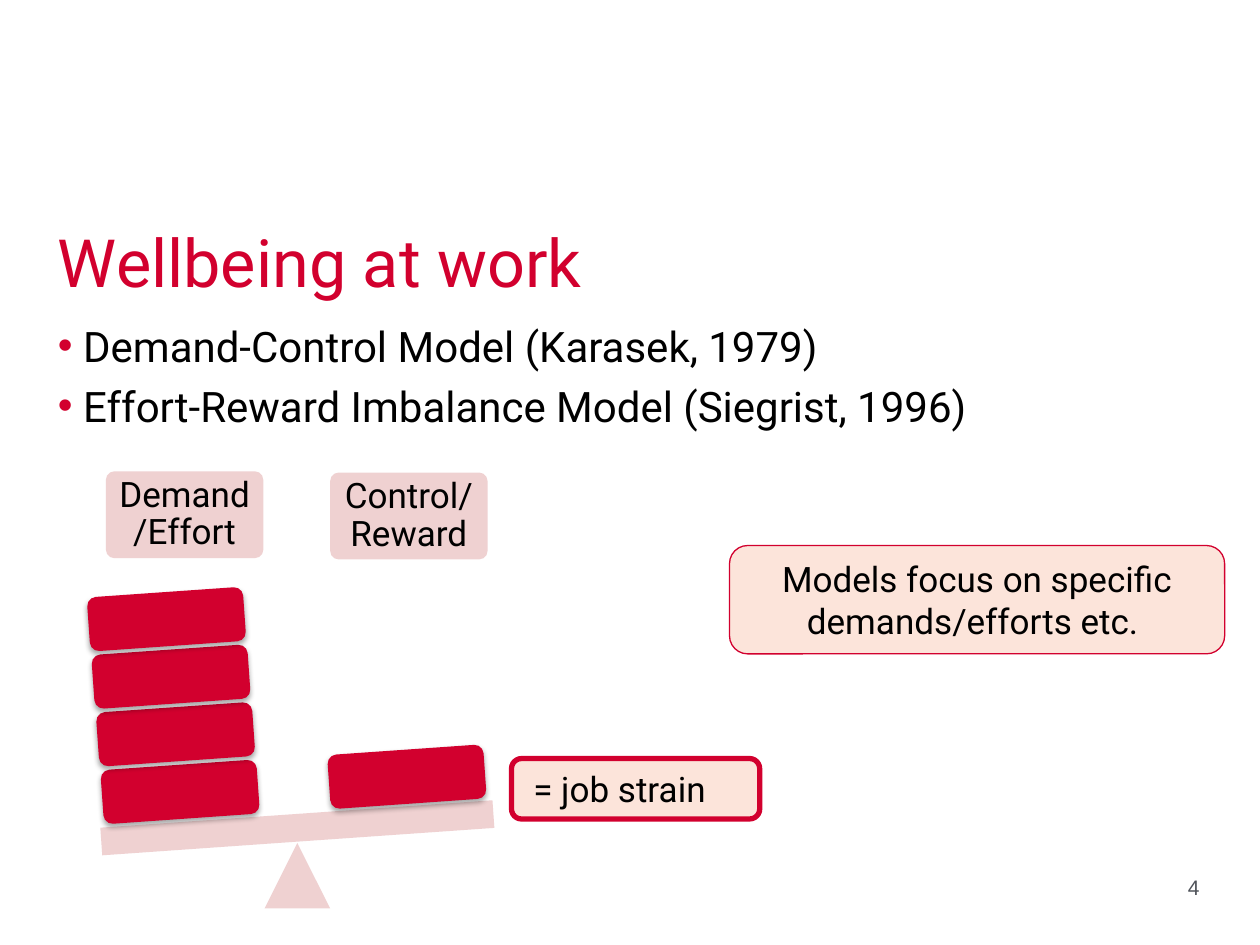
from typing import NamedTuple

from lxml import etree
from pptx import Presentation
from pptx.dml.color import RGBColor
from pptx.enum.shapes import MSO_SHAPE
from pptx.enum.text import MSO_ANCHOR, MSO_AUTO_SIZE, PP_ALIGN
from pptx.oxml.ns import qn
from pptx.util import Inches, Pt

ROUNDED, RECTANGLE, TRIANGLE = (
    MSO_SHAPE.ROUNDED_RECTANGLE, MSO_SHAPE.RECTANGLE, MSO_SHAPE.ISOSCELES_TRIANGLE)
TOP, MIDDLE, BOTTOM = MSO_ANCHOR.TOP, MSO_ANCHOR.MIDDLE, MSO_ANCHOR.BOTTOM
LEFT, CENTER, RIGHT = PP_ALIGN.LEFT, PP_ALIGN.CENTER, PP_ALIGN.RIGHT

CELL = Inches(0.1)  # the slide is a grid of 100 columns by 75 rows
COLUMNS, ROWS = 100, 75
RED, ROSE, PEACH, BLACK, GREY = "D2002E", "EECCCD", "FCE4DA", "000000", "50535A"
TILT = -4


class Box(NamedTuple):
    """Left, top, width and height in grid cells."""
    left: float
    top: float
    width: float
    height: float

    def inner(self, left, top, width, height):
        return Box(self.left + left, self.top + top, width, height)

    def lengths(self):
        return [round(cells * CELL) for cells in self]


def colour(value):
    return RGBColor.from_string(value)


def add_xml(parent, tag, **attributes):
    return etree.SubElement(parent, qn(tag), attributes)


def place(shape, box):
    shape.left, shape.top, shape.width, shape.height = box.lengths()


def set_frame(shape, anchor, side=0, ends=0, wrap=True):
    frame = shape.text_frame
    frame.auto_size = MSO_AUTO_SIZE.NONE
    frame.word_wrap = wrap
    frame.vertical_anchor = anchor
    frame.margin_left = frame.margin_right = Inches(side)
    frame.margin_top = frame.margin_bottom = Inches(ends)
    return frame


def write(para, text, size, font="Roboto", ink=BLACK, align=LEFT):
    para.alignment = align
    span = para.add_run()
    span.text = text
    span.font.size = Pt(size)
    span.font.name = font
    span.font.color.rgb = colour(ink)


def add_block(page, box, kind, fill, rotation=0, corner=None, line=0):
    shape = page.shapes.add_shape(kind, *box.lengths())
    shape.shadow.inherit = False
    shape.rotation = rotation
    shape.fill.solid()
    shape.fill.fore_color.rgb = colour(fill)
    if corner is not None:
        shape.adjustments[0] = corner
    if line:
        shape.line.color.rgb = colour(RED)
        shape.line.width = Pt(line)
    else:
        shape.line.fill.background()
    if fill == ROSE:
        add_xml(shape.fill._xPr.find(".//" + qn("a:srgbClr")), "a:alpha", val="90000")
    return shape


def add_drop_shadow(shape):
    effects = shape._element.spPr.find(qn("a:effectLst"))
    shadow = add_xml(effects, "a:outerShdw", blurRad=str(Pt(3.1)), dist=str(Pt(1.8)),
                     dir="5400000", rotWithShape="0")
    add_xml(add_xml(shadow, "a:srgbClr", val=BLACK), "a:alpha", val="35000")


def add_title(page, box, text):
    title = page.shapes.title
    place(title, box)
    frame = set_frame(title, BOTTOM, wrap=False)
    write(frame.paragraphs[0], text, 38, ink=RED)


def add_bullets(page, box, lines):
    body = page.placeholders[1]
    place(body, box)
    frame = set_frame(body, TOP)
    for index, text in enumerate(lines):
        para = frame.add_paragraph() if index else frame.paragraphs[0]
        para.space_before = Pt(5.5 if index else 0)
        properties = para._p.get_or_add_pPr()
        properties.set("marL", str(Inches(0.2)))
        properties.set("indent", str(-Inches(0.2)))
        add_xml(add_xml(properties, "a:buClr"), "a:srgbClr", val=RED)
        add_xml(properties, "a:buFont", typeface="Arial")
        add_xml(properties, "a:buChar", char="•")
        write(para, text, 24)


def add_pan_label(page, box, text):
    label = add_block(page, box, ROUNDED, ROSE, corner=0.1)
    para = set_frame(label, MIDDLE, 0.08, 0.08).paragraphs[0]
    para.line_spacing = 0.9
    write(para, text, 20, align=CENTER)


def add_weight(page, box):
    add_drop_shadow(add_block(page, box, ROUNDED, RED, TILT))


def add_seesaw(page, box):
    """Balance with four weights on the left pan and one on the right."""
    add_pan_label(page, box.inner(1.4, 0, 12.5, 6.9), "Demand/Effort")
    add_pan_label(page, box.inner(19.2, 0.1, 12.5, 6.9), "Control/Reward")
    add_block(page, box.inner(14, 29.5, 5.2, 5.2), TRIANGLE, ROSE)
    add_block(page, box.inner(1, 27.2, 31.2, 2.2), RECTANGLE, ROSE, TILT)
    for level in range(4):
        add_weight(page, box.inner(1.1 - 0.36 * level, 23.3 - 4.57 * level, 12.4, 4.3))
    add_weight(page, box.inner(19.1, 22.1, 12.4, 4.3))


def add_callout(page, box, text, line, side, align):
    callout = add_block(page, box, ROUNDED, PEACH, line=line)
    frame = set_frame(callout, MIDDLE, side, 0.05)
    write(frame.paragraphs[0], text, 20, align=align)


def add_page_number(page, box, number):
    holder = page.shapes.add_textbox(*box.lengths())
    write(set_frame(holder, TOP).paragraphs[0], number, 12, "Arial", GREY, RIGHT)


def main():
    deck = Presentation()
    deck.slide_width, deck.slide_height = COLUMNS * CELL, ROWS * CELL
    page = deck.slides.add_slide(deck.slide_layouts[1])
    add_title(page, Box(4.6, 14.8, 90.6, 9.1), "Wellbeing at work")
    add_bullets(page, Box(4.6, 25.4, 90.6, 43.3), [
        "Demand-Control Model (Karasek, 1979)",
        "Effort-Reward Imbalance Model (Siegrist, 1996)",
    ])
    add_seesaw(page, Box(7, 37.4, 32.2, 34.7))
    add_callout(page, Box(40.6, 60.2, 19.7, 4.8), "= job strain", 3, 0.15, LEFT)
    add_callout(page, Box(57.9, 43.3, 39.3, 8.6),
                "Models focus on specific demands/efforts etc. ", 0.75, 0.1, CENTER)
    add_page_number(page, Box(87.8, 69.4, 7.4, 2.8), "4")
    deck.save("out.pptx")


if __name__ == "__main__":
    main()
